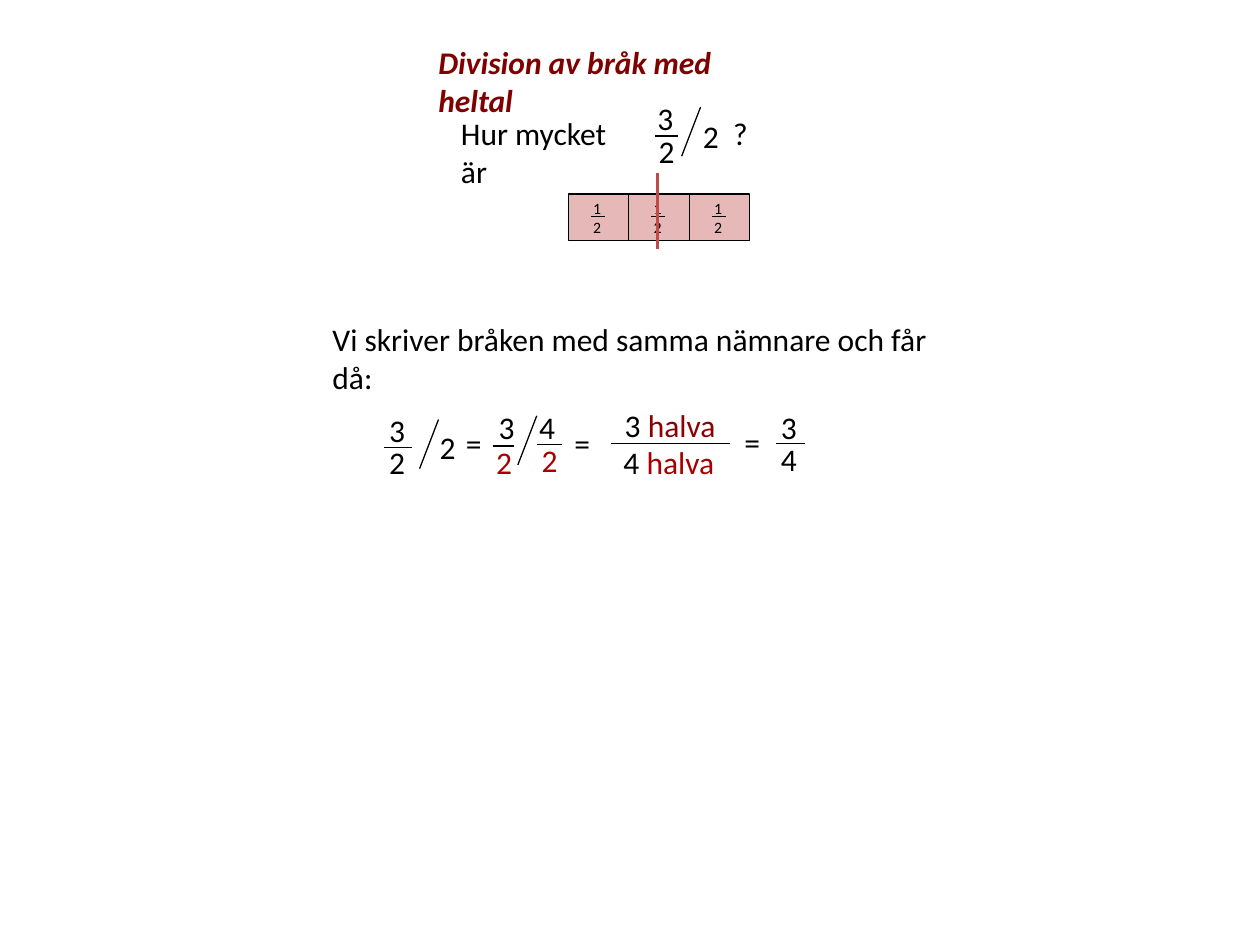
from dataclasses import dataclass

from pptx import Presentation
from pptx.dml.color import RGBColor
from pptx.enum.shapes import MSO_CONNECTOR, MSO_SHAPE
from pptx.enum.text import MSO_AUTO_SIZE
from pptx.oxml.ns import qn
from pptx.util import Inches, Pt

STRAIGHT = MSO_CONNECTOR.STRAIGHT
RECTANGLE = MSO_SHAPE.RECTANGLE
FIT_SHAPE = MSO_AUTO_SIZE.SHAPE_TO_FIT_TEXT


@dataclass(frozen=True)
class Theme:
    font: str = "Calibri"
    ink: str = "000000"
    title: str = "800000"
    halves: str = "A70001"
    halves_dark: str = "8B0102"
    box: str = "E6B9B8"
    cut: str = "BF4C48"
    body: float = 18
    small: float = 9
    thin: float = 0.75
    thick: float = 1.5


THEME = Theme()


def add_text(s, runs, left, top, width=0.33, height=0.4, size=THEME.body, **formats):
    """Add one line of text; runs is a list of (text, colour)."""
    sp = s.shapes.add_textbox(Inches(left), Inches(top), Inches(width), Inches(height))
    tf = sp.text_frame
    tf.word_wrap = False
    tf.auto_size = FIT_SHAPE
    p = tf.paragraphs[0]
    for text, color in runs:
        r = p.add_run()
        r.text = text
        r.font.color.rgb = RGBColor.from_string(color)
        for name, value in {"name": THEME.font, "size": Pt(size), **formats}.items():
            setattr(r.font, name, value)


def add_line(s, x1, y1, x2, y2, color=THEME.ink, weight=THEME.thin):
    line = s.shapes.add_connector(STRAIGHT, Inches(x1), Inches(y1), Inches(x2), Inches(y2))
    line.line.color.rgb = RGBColor.from_string(color)
    line.line.width = Pt(weight)
    sp_pr = line._element.spPr
    sp_pr.append(sp_pr.makeelement(qn("a:effectLst"), {}))


def add_slash(s, x, y):
    add_line(s, x, y, x + 0.15, y - 0.39)


def add_fraction(s, top, bottom, bar, **box):
    """Stack two (runs, left, top) parts about a (left, y, width) bar."""
    for part in (top, bottom):
        add_text(s, *part, **box)
    left, y, width = bar
    add_line(s, left, y, left + width, y)


def add_half_boxes(s, left=4.51, top=1.54, width=0.48, height=0.37, count=3):
    for i in range(count):
        x = left + i * width
        sp = s.shapes.add_shape(RECTANGLE, Inches(x), Inches(top), Inches(width), Inches(height))
        sp.shadow.inherit = False
        sp.fill.solid()
        sp.fill.fore_color.rgb = RGBColor.from_string(THEME.box)
        sp.line.color.rgb = RGBColor.from_string(THEME.ink)
        sp.line.width = Pt(THEME.thin)
        add_fraction(s, ([("1", THEME.ink)], x + 0.1, top - 0.01),
                     ([("2", THEME.ink)], x + 0.1, top + 0.14),
                     (x + 0.18, top + 0.18, 0.11),
                     width=0.27, height=0.25, size=THEME.small)
    middle = left + count * width / 2 - 0.01
    add_line(s, middle, 1.37, middle, 1.98, THEME.cut, THEME.thick)


def add_question(s):
    ink = THEME.ink
    add_text(s, [("Hur mycket är", ink)], 3.56, 0.86, 1.61)
    add_fraction(s, ([("3", ink)], 5.12, 0.74), ([("2", ink)], 5.13, 1), (5.2, 1.08, 0.18))
    add_slash(s, 5.41, 1.24)
    add_text(s, [("2", ink)], 5.48, 0.88)
    add_text(s, [("?", ink)], 5.72, 0.86)


def add_solution(s):
    ink, red = THEME.ink, THEME.halves
    add_fraction(s, ([("3", ink)], 2.99, 3.21), ([("2", ink)], 2.99, 3.47), (3.05, 3.55, 0.22))
    add_slash(s, 3.33, 3.72)
    add_text(s, [("2", ink)], 3.39, 3.35)
    add_fraction(s, ([("3", ink)], 3.86, 3.19), ([("2", red)], 3.84, 3.47), (3.91, 3.54, 0.17))
    add_slash(s, 4.11, 3.69)
    add_fraction(s, ([("4", ink)], 4.18, 3.19), ([("2", red)], 4.2, 3.45), (4.26, 3.53, 0.2))
    add_fraction(s, ([("3 ", ink), ("halva", THEME.halves_dark)], 4.86, 3.17),
                 ([("4", ink), (" halva", red)], 4.85, 3.47), (4.85, 3.52, 0.94), width=0.93)
    add_fraction(s, ([("3", ink)], 6.1, 3.19), ([("4", ink)], 6.1, 3.44), (6.16, 3.52, 0.23))
    for left, top in ((3.6, 3.32), (4.46, 3.32), (5.81, 3.31)):
        add_text(s, [("=", ink)], left, top)


def main():
    prs = Presentation()
    prs.slide_width, prs.slide_height = Inches(10), Inches(7.5)
    s = prs.slides.add_slide(prs.slide_layouts[6])
    add_text(s, [("Division av bråk med heltal", THEME.title)], 3.38, 0.29, 3.01,
             bold=True, italic=True)
    add_question(s)
    add_half_boxes(s)
    add_text(s, [("Vi skriver bråken med samma nämnare och får då:", THEME.ink)], 2.54, 2.49, 5.28)
    add_solution(s)
    prs.save("out.pptx")


if __name__ == "__main__":
    main()
